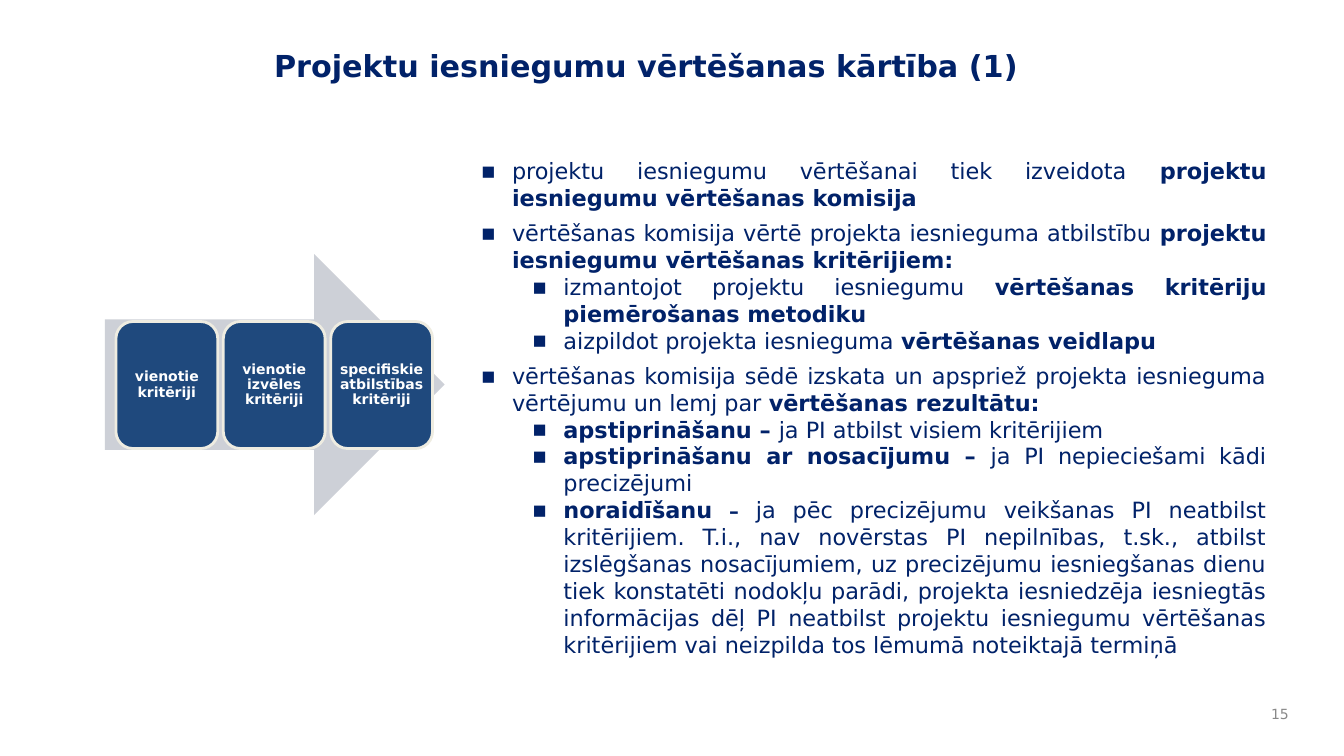
"""Build the slide on how project applications are evaluated."""
import pptx
import pptx.dml.color
import pptx.enum.shapes
import pptx.enum.text
import pptx.oxml
import pptx.oxml.ns
import pptx.util

Inches, Pt = pptx.util.Inches, pptx.util.Pt
RGB = pptx.dml.color.RGBColor.from_string
SHAPE = pptx.enum.shapes.MSO_SHAPE
ALIGN = pptx.enum.text.PP_ALIGN
ANCHOR = pptx.enum.text.MSO_ANCHOR

THEME = {
    "font": "DejaVu Sans",
    "navy": "012269", "card": "1F497D", "border": "EEECE1",
    "arrow": "CDD0D7", "white": "FFFFFF", "grey": "898989",
    "title": 21.6, "body": 16, "dash": 14, "small": 10,
}

TITLE = "Projektu iesniegumu vērtēšanas kārtība (1)"
PAGE = "15"
CRITERIA = ["vienotie kritēriji", "vienotie izvēles kritēriji", "specifiskie atbilstības kritēriji"]
POINTS = [
    (0, [("projektu iesniegumu vērtēšanai tiek izveidota ", False),
         ("projektu iesniegumu vērtēšanas komisija", True)]),
    (0, [("vērtēšanas komisija vērtē projekta iesnieguma atbilstību ", False),
         ("projektu iesniegumu vērtēšanas kritērijiem:", True)]),
    (1, [("izmantojot projektu iesniegumu ", False),
         ("vērtēšanas kritēriju piemērošanas metodiku", True)]),
    (1, [("aizpildot projekta iesnieguma ", False), ("vērtēšanas veidlapu", True)]),
    (0, [("vērtēšanas komisija sēdē izskata un apspriež projekta iesnieguma "
          "vērtējumu un lemj par ", False),
         ("vērtēšanas rezultātu:", True)]),
    (1, [("apstiprināšanu – ", True), ("ja PI atbilst visiem kritērijiem", False)]),
    (1, [("apstiprināšanu ar nosacījumu – ", True),
         ("ja PI nepieciešami kādi precizējumi", False)]),
    (1, [("noraidīšanu", True), (" – ", True, THEME["dash"]),
         ("ja pēc precizējumu veikšanas PI neatbilst kritērijiem. T.i., nav novērstas "
          "PI nepilnības, t.sk., atbilst izslēgšanas nosacījumiem, uz precizējumu "
          "iesniegšanas dienu tiek konstatēti nodokļu parādi, projekta iesniedzēja "
          "iesniegtās informācijas dēļ PI neatbilst projektu iesniegumu vērtēšanas "
          "kritērijiem vai neizpilda tos lēmumā noteiktajā termiņā", False)]),
]

ARROW = (1.04, 2.52, 3.37, 2.59)
CARD_LEFT, CARD_TOP, CARD_W, CARD_H, CARD_STEP = 1.15, 3.19, 1.01, 1.26, 1.065
INDENTS, HANGING = (0.31, 0.82), 0.31


def add_text(p, text, size=THEME["body"], color=THEME["navy"], bold=False):
    r = p.add_run()
    r.text = text
    r.font.name = THEME["font"]
    r.font.size = Pt(size)
    r.font.bold = bold
    r.font.color.rgb = RGB(color)


def add_box(slide, left, top, width, height, anchor=ANCHOR.TOP):
    sp = slide.shapes.add_textbox(*map(Inches, (left, top, width, height)))
    tf = sp.text_frame
    tf.word_wrap = True
    tf.vertical_anchor = anchor
    return tf


def add_filled(slide, kind, box, fill, line=None):
    sp = slide.shapes.add_shape(kind, *map(Inches, box))
    sp.shadow.inherit = False
    sp.fill.solid()
    sp.fill.fore_color.rgb = RGB(fill)
    if line:
        sp.line.color.rgb = RGB(line)
        sp.line.width = Pt(2)
    else:
        sp.line.fill.background()
    return sp


def add_bullet(p, level):
    pPr = p._p.get_or_add_pPr()
    pPr.set("marL", str(Inches(INDENTS[level])))
    pPr.set("indent", str(-Inches(HANGING)))
    ns = pptx.oxml.ns.nsdecls("a")
    pPr.append(pptx.oxml.parse_xml(f'<a:buFont {ns} typeface="{THEME["font"]}"/>'))
    pPr.append(pptx.oxml.parse_xml(f'<a:buChar {ns} char="▪"/>'))


def add_criteria(slide):
    add_filled(slide, SHAPE.RIGHT_ARROW, ARROW, THEME["arrow"])
    for i, label in enumerate(CRITERIA):
        box = (CARD_LEFT + i * CARD_STEP, CARD_TOP, CARD_W, CARD_H)
        sp = add_filled(slide, SHAPE.ROUNDED_RECTANGLE, box, THEME["card"], THEME["border"])
        tf = sp.text_frame
        tf.word_wrap = True
        tf.vertical_anchor = ANCHOR.MIDDLE
        tf.margin_left = tf.margin_right = tf.margin_top = tf.margin_bottom = Inches(0.03)
        p = tf.paragraphs[0]
        p.alignment = ALIGN.CENTER
        p.line_spacing = 0.9
        add_text(p, label, size=THEME["small"], color=THEME["white"], bold=True)


def add_points(slide):
    tf = add_box(slide, 4.67, 1.51, 7.99, 5.76)
    for i, (level, runs) in enumerate(POINTS):
        p = tf.add_paragraph() if i else tf.paragraphs[0]
        p.level = level
        p.alignment = ALIGN.JUSTIFY
        p.space_before = Pt(6 if i and level == 0 else 0)
        add_bullet(p, level)
        for text, bold, *size in runs:
            add_text(p, text, bold=bold, size=size[0] if size else THEME["body"])


def main():
    prs = pptx.Presentation()
    prs.slide_width, prs.slide_height = Inches(13.33), Inches(7.5)
    s = prs.slides.add_slide(prs.slide_layouts[6])
    title = add_box(s, 2.62, 0.42, 10.04, 0.66).paragraphs[0]
    add_text(title, TITLE, size=THEME["title"], bold=True)
    add_criteria(s)
    page = add_box(s, 12.44, 6.92, 0.44, 0.33, ANCHOR.MIDDLE).paragraphs[0]
    page.alignment = ALIGN.RIGHT
    add_text(page, PAGE, size=THEME["small"], color=THEME["grey"])
    add_points(s)
    prs.save("out.pptx")


if __name__ == "__main__":
    main()
